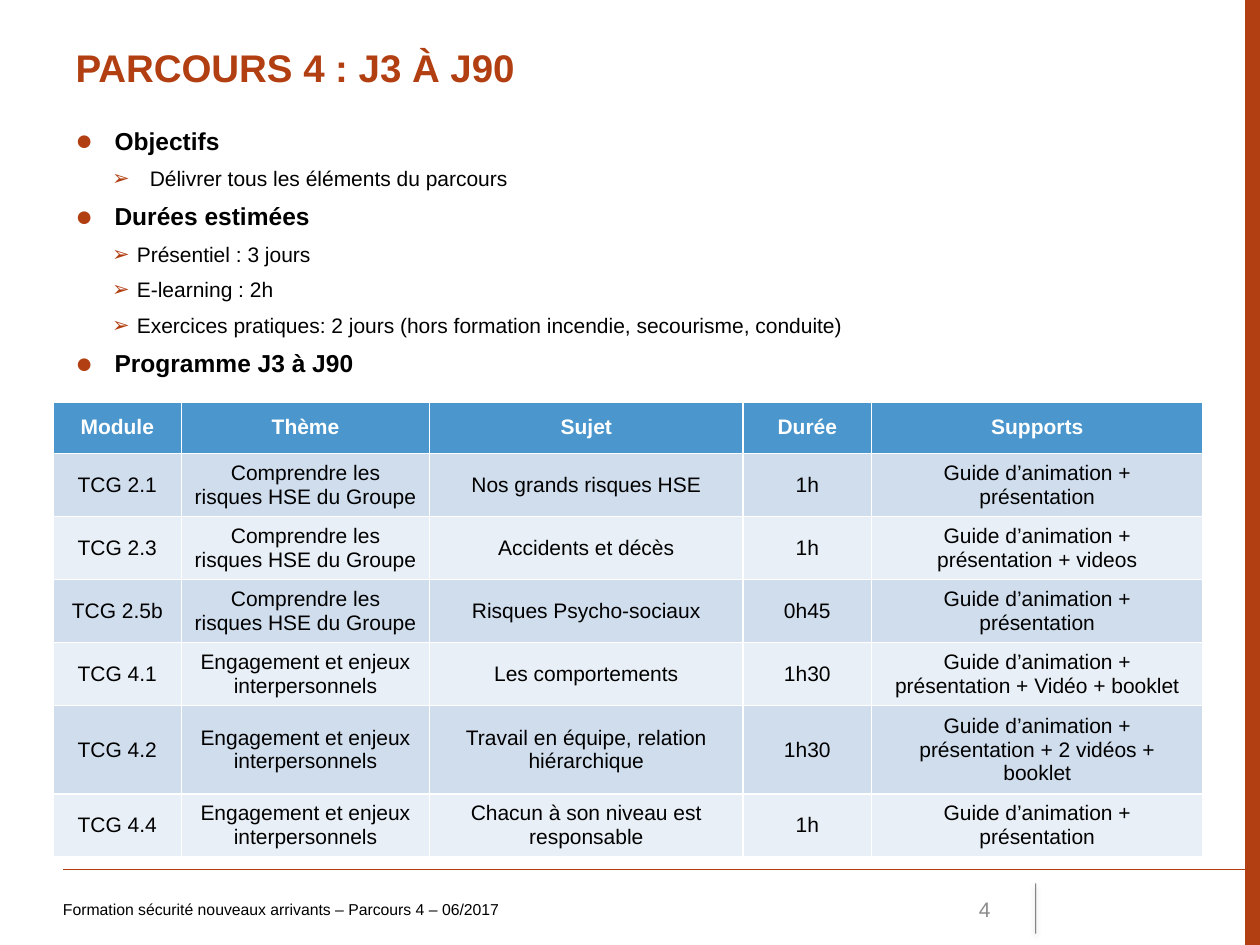
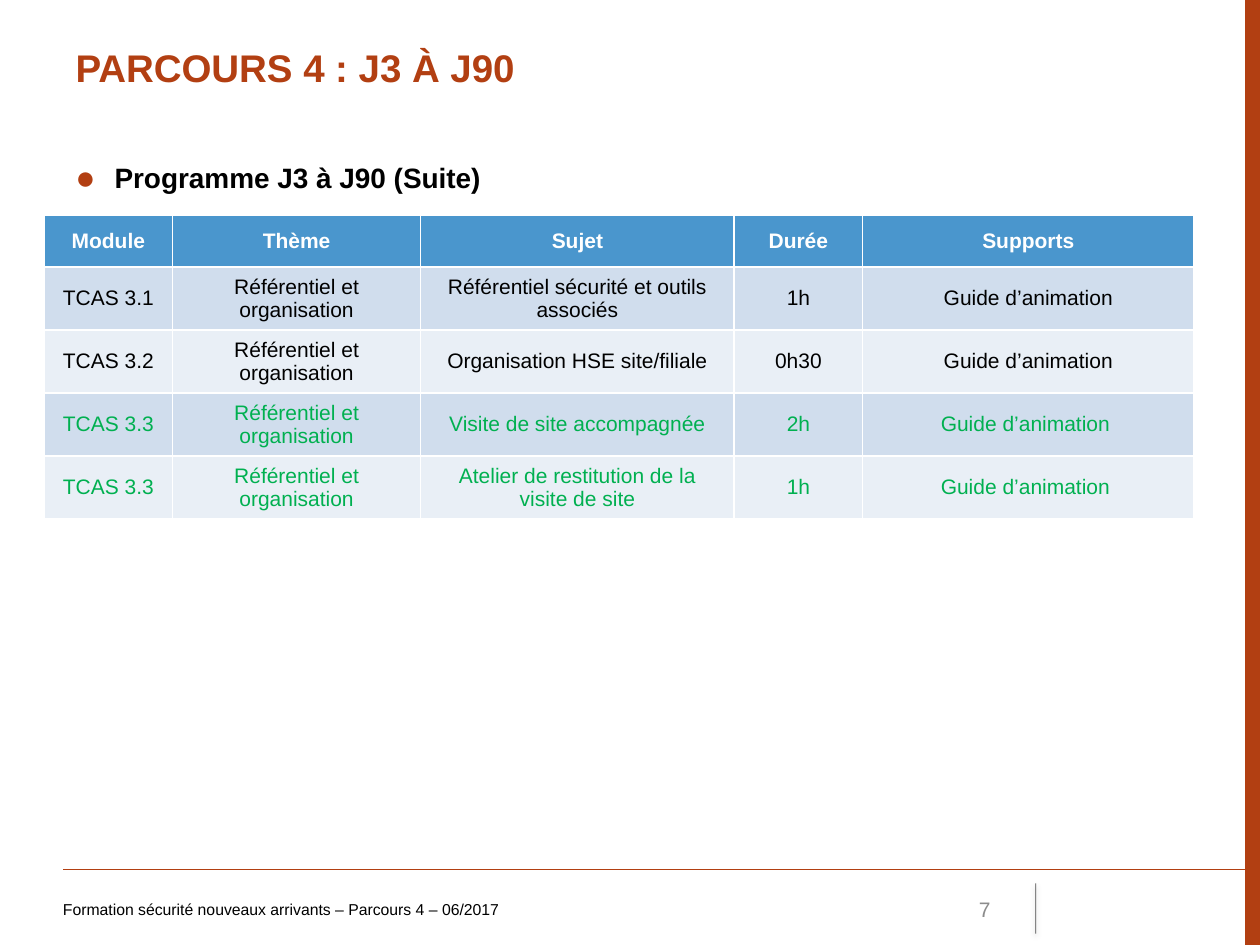
from dataclasses import dataclass

from lxml.etree import SubElement
from pptx import Presentation
from pptx.dml.color import RGBColor
from pptx.enum.shapes import MSO_CONNECTOR, MSO_SHAPE
from pptx.enum.text import MSO_ANCHOR, PP_ALIGN
from pptx.oxml.ns import qn
from pptx.util import Cm, Pt


@dataclass(frozen=True)
class Theme:
    font: str = "Arial"
    rust: str = "B23F12"
    blue: str = "4A96CD"
    dark: str = "D0DDED"
    pale: str = "E9EFF6"
    green: str = "00B050"
    grey: str = "8C8C8C"
    black: str = "000000"
    white: str = "FFFFFF"
    title: int = 22
    large: int = 16
    head: int = 14
    body: int = 12
    foot: int = 9


T = Theme()


def write(par, text, size, tint, bold=False):
    run = par.add_run()
    run.text = text
    form = {"name": T.font, "size": Pt(size), "bold": bold}
    for key, value in form.items():
        setattr(run.font, key, value)
    run.font.color.rgb = RGBColor.from_string(tint)


def add(parent, tag, **attrs):
    return SubElement(parent, qn(tag), {key: str(value) for key, value in attrs.items()})


# Content: each point is level, hanging indent, left edge, size, text
COLS = [2.59, 5, 6.32, 2.59, 6.68]
HEADS = ["Module", "Thème", "Sujet", "Durée", "Supports"]
RISKS = "Comprendre les risques HSE du Groupe"
STAKES = "Engagement et enjeux interpersonnels"
RULES = "Référentiel et organisation"
GUIDE = "Guide d’animation"
SHOW = GUIDE + " + présentation"

pages = [
    {
        "num": "4", "top": 2.41, "high": 5.33, "grid": (1.07, 8.1), "green": [],
        "points": [
            (0, 0.79, 0.79, T.head, "Objectifs"),
            (1, 0.76, 1.5, T.body, "Délivrer tous les éléments du parcours"),
            (0, 0.79, 0.79, T.head, "Durées estimées"),
            (1, 0.5, 1.24, T.body, "Présentiel : 3 jours"),
            (1, 0.5, 1.24, T.body, "E-learning : 2h"),
            (1, 0.5, 1.24, T.body,
             "Exercices pratiques: 2 jours (hors formation incendie, secourisme, conduite)"),
            (0, 0.79, 0.79, T.head, "Programme J3 à J90"),
        ],
        "rows": [
            ["TCG 2.1", RISKS, "Nos grands risques HSE", "1h", SHOW],
            ["TCG 2.3", RISKS, "Accidents et décès", "1h", SHOW + " + videos"],
            ["TCG 2.5b", RISKS, "Risques Psycho-sociaux", "0h45", SHOW],
            ["TCG 4.1", STAKES, "Les comportements", "1h30", SHOW + " + Vidéo + booklet"],
            ["TCG 4.2", STAKES, "Travail en équipe, relation hiérarchique", "1h30",
             SHOW + " + 2 vidéos + booklet"],
            ["TCG 4.4", STAKES, "Chacun à son niveau est responsable", "1h", SHOW],
        ],
    },
    {
        "num": "7", "top": 3.12, "high": 1.19, "grid": (0.89, 4.34), "green": [3, 4],
        "points": [(0, 0.79, 0.79, T.large, "Programme J3 à J90 (Suite)")],
        "rows": [
            ["TCAS 3.1", RULES, "Référentiel sécurité et outils associés", "1h", GUIDE],
            ["TCAS 3.2", RULES, "Organisation HSE site/filiale", "0h30", GUIDE],
            ["TCAS 3.3", RULES, "Visite de site accompagnée", "2h", GUIDE + " "],
            ["TCAS 3.3", RULES, "Atelier de restitution de la visite de site", "1h", GUIDE + " "],
        ],
    },
]

deck = Presentation()
deck.slide_width, deck.slide_height = Cm(25.4), Cm(19.05)

for page in pages:
    slide = deck.slides.add_slide(deck.slide_layouts[5])
    shapes = slide.shapes

    # Side band
    band = shapes.add_shape(MSO_SHAPE.RECTANGLE, Cm(25.1), 0, Cm(0.3), Cm(19.05))
    band.shadow.inherit = False
    band.fill.solid()
    band.fill.fore_color.rgb = RGBColor.from_string(T.rust)
    band.line.fill.background()

    # Footer rule and upright mark with its soft shadow
    for x, y, right, low, tint, width in [
        (1.27, 17.53, 25.4, 17.53, T.rust, 0.75),
        (20.88, 17.81, 20.88, 18.82, T.black, 0.5),
    ]:
        rule = shapes.add_connector(MSO_CONNECTOR.STRAIGHT, Cm(x), Cm(y), Cm(right), Cm(low))
        rule.line.color.rgb = RGBColor.from_string(tint)
        rule.line.width = Pt(width)
        props = rule._element.spPr
        effects = add(props, "a:effectLst")
        if x == right:
            add(props.find(".//" + qn("a:srgbClr")), "a:alpha", val=70000)
            shade = add(effects, "a:outerShdw", blurRad=Pt(3.1), dist=Pt(1.6),
                        dir=5400000, rotWithShape=0)
            add(add(shade, "a:srgbClr", val=T.black), "a:alpha", val=38000)

    # Title
    title = shapes.title
    place = {"left": Cm(1.27), "top": Cm(0.76), "width": Cm(22.83), "height": Cm(1.75)}
    for key, value in place.items():
        setattr(title, key, value)
    title.text_frame.vertical_anchor = MSO_ANCHOR.TOP
    par = title.text_frame.paragraphs[0]
    par.alignment = PP_ALIGN.LEFT
    write(par, "PARCOURS 4 : J3 À J90", T.title, T.rust, True)

    # Bullet points
    box = shapes.add_textbox(Cm(1.27), Cm(page["top"]), Cm(22.83), Cm(page["high"]))
    frame = box.text_frame
    frame.word_wrap = True
    for i, (level, hang, left, size, text) in enumerate(page["points"]):
        par = frame.add_paragraph() if i else frame.paragraphs[0]
        form = {"level": level, "space_before": Pt(3 if i else 0), "space_after": Pt(3)}
        for key, value in form.items():
            setattr(par, key, value)
        props = par._p.get_or_add_pPr()
        props.set("marL", str(Cm(left)))
        props.set("indent", str(-Cm(hang)))
        add(add(props, "a:buClr"), "a:srgbClr", val=T.rust)
        add(props, "a:buSzPct", val=100000 if level else 120000)
        add(props, "a:buFont", typeface=T.font)
        add(props, "a:buChar", char="➢" if level else "●")
        write(par, text, size, T.black, level == 0)

    # Programme table
    x, y = page["grid"]
    rows = [HEADS] + page["rows"]
    table = shapes.add_table(len(rows), len(COLS), Cm(x), Cm(y), Cm(sum(COLS)),
                             Cm(1.04 * len(rows))).table
    for col, width in zip(table.columns, COLS):
        col.width = Cm(width)
    for r, row in enumerate(rows):
        fill = T.blue if r == 0 else T.dark if r % 2 else T.pale
        tint = T.white if r == 0 else T.green if r in page["green"] else T.black
        for c, text in enumerate(row):
            cell = table.cell(r, c)
            cell.vertical_anchor = MSO_ANCHOR.MIDDLE
            cell.fill.solid()
            cell.fill.fore_color.rgb = RGBColor.from_string(fill)
            par = cell.text_frame.paragraphs[0]
            par.alignment = PP_ALIGN.CENTER
            write(par, text, T.body, tint, r == 0)

    # Footer text and page number
    for x, width, inset, text, size, tint, align in [
        (1.27, 15.44, 0, "Formation sécurité nouveaux arrivants – Parcours 4 – 06/2017",
         T.foot, T.black, PP_ALIGN.LEFT),
        (18.21, 2.01, 0.25, page["num"], T.body, T.grey, PP_ALIGN.RIGHT),
    ]:
        frame = shapes.add_textbox(Cm(x), Cm(17.81), Cm(width), Cm(1.02)).text_frame
        form = {"word_wrap": True, "vertical_anchor": MSO_ANCHOR.MIDDLE, "margin_left": Cm(inset)}
        for key, value in form.items():
            setattr(frame, key, value)
        frame.paragraphs[0].alignment = align
        write(frame.paragraphs[0], text, size, tint)

deck.save("out.pptx")
